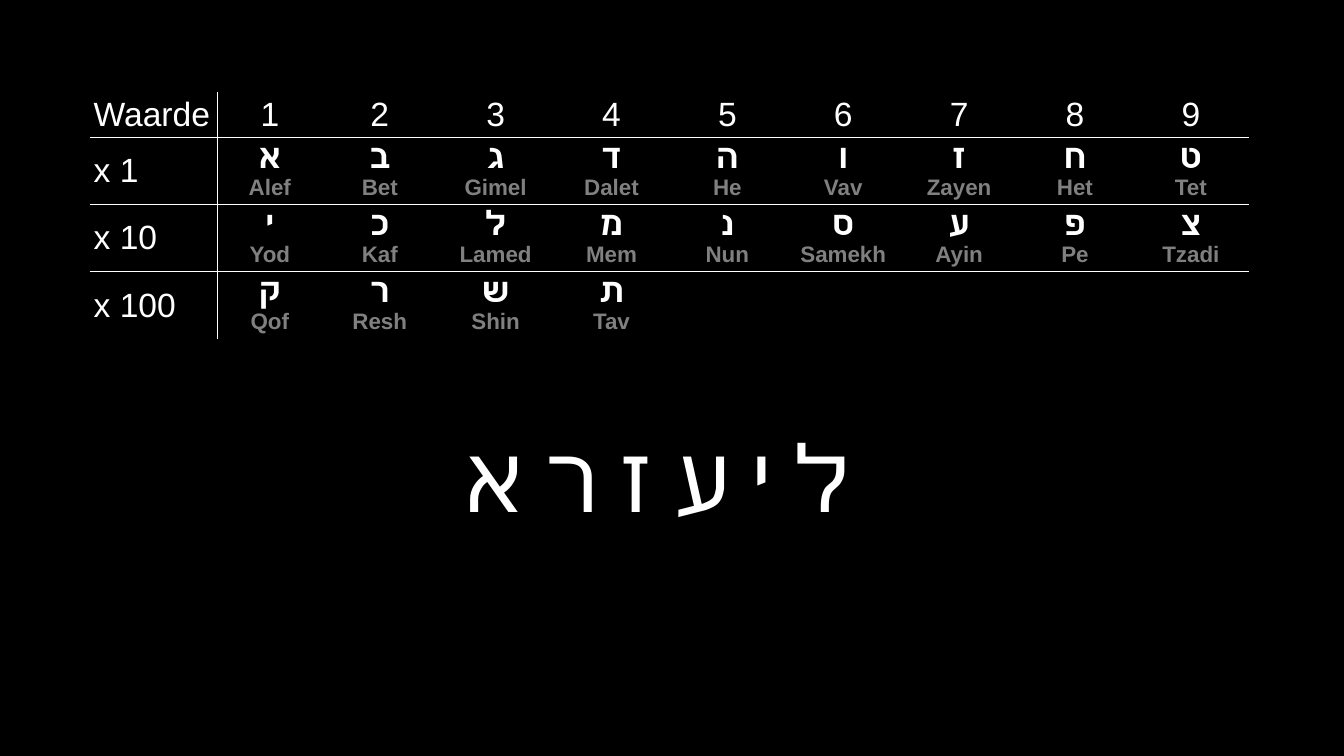
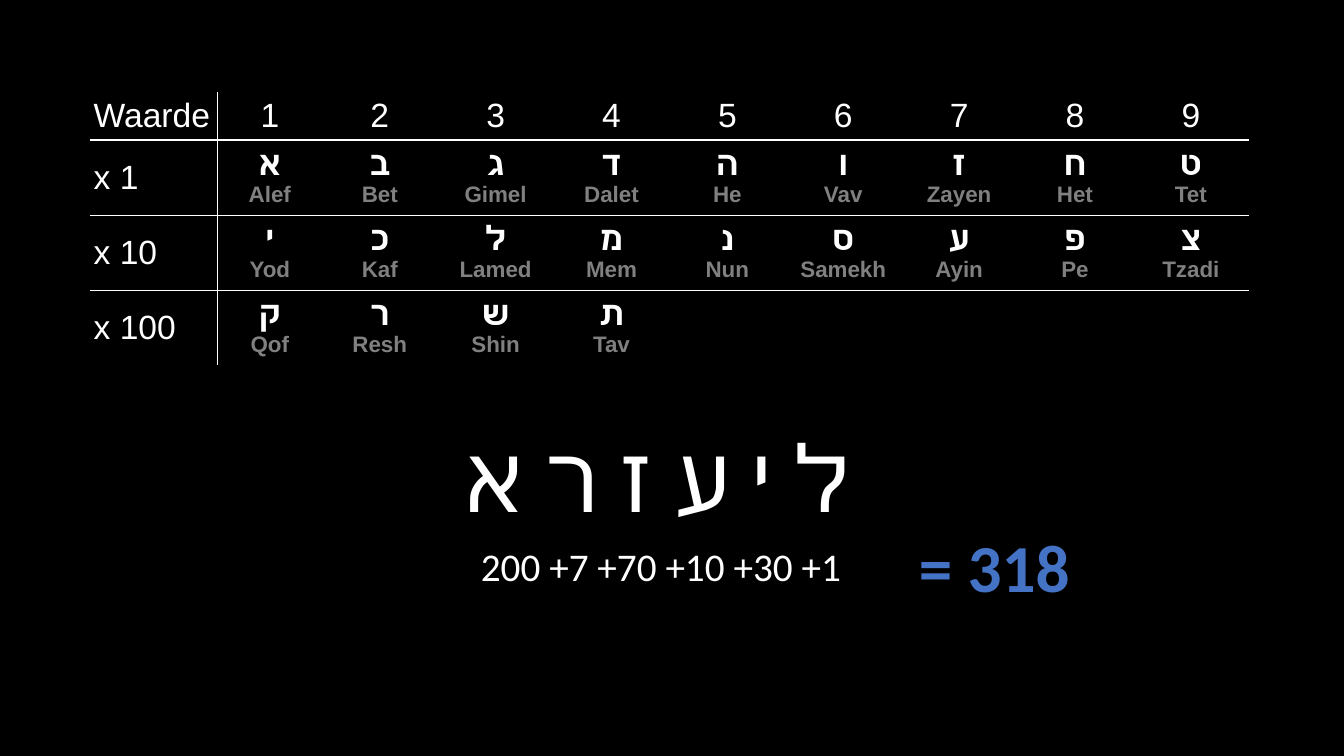
from dataclasses import dataclass

from lxml.etree import SubElement
from pptx import Presentation
from pptx.dml.color import RGBColor
from pptx.enum.text import MSO_ANCHOR as ANCHOR, MSO_AUTO_SIZE as AUTO, PP_ALIGN as ALIGN
from pptx.oxml.ns import qn
from pptx.slide import Slide
from pptx.table import _Cell as Cell
from pptx.util import Cm, Pt

BLACK = RGBColor(0x00, 0x00, 0x00)
WHITE = RGBColor(0xFF, 0xFF, 0xFF)
GREY = RGBColor(0x80, 0x80, 0x80)
BLUE = RGBColor(0x44, 0x72, 0xC4)

# Text formats
VALUE = dict(name="Arial", size=Pt(24), bold=False, color=WHITE)
LETTER = VALUE | dict(bold=True)
LETTER_NAME = LETTER | dict(size=Pt(16), color=GREY)
WORD = dict(name="Calibri", size=Pt(66), bold=False, color=WHITE)
SUM = WORD | dict(size=Pt(28))
TOTAL = WORD | dict(size=Pt(48), bold=True, color=BLUE)

# Table of letter values: each entry is a letter and its name
HEADER = ["Waarde"] + [str(n) for n in range(1, 10)]
LETTER_ROWS = {
    "x 1": "א Alef, ב Bet, ג Gimel, ד Dalet, ה He, ו Vav, ז Zayen, ח Het, ט Tet",
    "x 10": "י Yod, כ Kaf, ל Lamed, מ Mem, נ Nun, ס Samekh, ע Ayin, פ Pe, צ Tzadi",
    "x 100": "ק Qof, ר Resh, ש Shin, ת Tav",
}
COL_WIDTHS = [3.23, 2.62] + [2.92] * 8
ROW_HEIGHTS = [1.16] + [1.69] * 3
NO_STYLE_NO_GRID = "{2D5ABB26-0587-4C30-8999-92F81FD0307C}"


@dataclass(frozen=True)
class Label:
    text: str
    left: float
    top: float
    width: float
    height: float
    font: dict
    align: ALIGN
    wrap: bool = True


NAME_WORD = Label("ל י ע ז ר א ", 11.15, 10.46, 11.4, 3.07, WORD, ALIGN.CENTER)
NAME_SUM = Label("200 +7 +70 +10 +30 +1", 10.8, 13.54, 10.64, 1.45, SUM, ALIGN.RIGHT)
NAME_TOTAL = Label("= 318", 22.91, 13.11, 4.34, 2.31, TOTAL, ALIGN.LEFT, wrap=False)
SLIDES = [[NAME_WORD], [NAME_WORD, NAME_SUM, NAME_TOTAL]]


def write(p, text: str, font: dict, align: ALIGN) -> None:
    p.alignment = align
    r = p.add_run()
    r.text = text
    for key, value in font.items():
        if key == "color":
            r.font.color.rgb = value
        else:
            setattr(r.font, key, value)


def draw_borders(cell: Cell, sides: dict[str, bool]) -> None:
    """Rule the marked sides in white and leave the others open."""
    tc_pr = cell._tc.get_or_add_tcPr()
    for side, ruled in sides.items():
        ln = SubElement(tc_pr, qn(f"a:ln{side}"), w=str(Pt(1)))
        if ruled:
            fill = SubElement(ln, qn("a:solidFill"))
            SubElement(fill, qn("a:srgbClr"), val=str(WHITE))
        else:
            SubElement(ln, qn("a:noFill"))


def fill_cell(cell: Cell, lines: list[tuple[str, dict]], align: ALIGN) -> None:
    tf = cell.text_frame
    for i, (text, font) in enumerate(lines):
        write(tf.add_paragraph() if i else tf.paragraphs[0], text, font, align)


def add_value_table(s: Slide) -> None:
    rows, cols = len(ROW_HEIGHTS), len(COL_WIDTHS)
    frame = s.shapes.add_table(rows, cols, Cm(2.26), Cm(2.31),
                               Cm(sum(COL_WIDTHS)), Cm(sum(ROW_HEIGHTS)))
    table = frame.table
    table.first_row = table.horz_banding = False
    table._tbl.tblPr.find(qn("a:tableStyleId")).text = NO_STYLE_NO_GRID
    for col, width in zip(table.columns, COL_WIDTHS):
        col.width = Cm(width)
    for row, height in zip(table.rows, ROW_HEIGHTS):
        row.height = Cm(height)

    # Rules run between rows and after the first column
    for r in range(rows):
        for c in range(cols):
            cell = table.cell(r, c)
            cell.vertical_anchor = ANCHOR.MIDDLE
            for side in ("left", "right", "top", "bottom"):
                setattr(cell, f"margin_{side}", Cm(0.1))
            draw_borders(cell, {"L": c == 1, "R": c == 0, "T": r > 0, "B": r < rows - 1})
            cell.fill.background()

    # Header, multipliers and letters
    for c, text in enumerate(HEADER):
        fill_cell(table.cell(0, c), [(text, VALUE)], ALIGN.CENTER if c else ALIGN.LEFT)
    for r, (factor, letters) in enumerate(LETTER_ROWS.items(), start=1):
        fill_cell(table.cell(r, 0), [(factor, VALUE)], ALIGN.LEFT)
        for c, entry in enumerate(letters.split(", "), start=1):
            letter, name = entry.split()
            fill_cell(table.cell(r, c), [(letter, LETTER), (name, LETTER_NAME)], ALIGN.CENTER)


def add_label(s: Slide, label: Label) -> None:
    box = (label.left, label.top, label.width, label.height)
    tf = s.shapes.add_textbox(*map(Cm, box)).text_frame
    tf.word_wrap = label.wrap
    tf.auto_size = AUTO.SHAPE_TO_FIT_TEXT
    write(tf.paragraphs[0], label.text, label.font, label.align)


def main() -> None:
    prs = Presentation()
    prs.slide_width, prs.slide_height = Cm(33.87), Cm(19.05)

    # Shared black background
    background = prs.slide_master.background.fill
    background.solid()
    background.fore_color.rgb = BLACK

    blank = prs.slide_layouts.get_by_name("Blank")
    for labels in SLIDES:
        s = prs.slides.add_slide(blank)
        add_value_table(s)
        for label in labels:
            add_label(s, label)
    prs.save("out.pptx")


if __name__ == "__main__":
    main()
